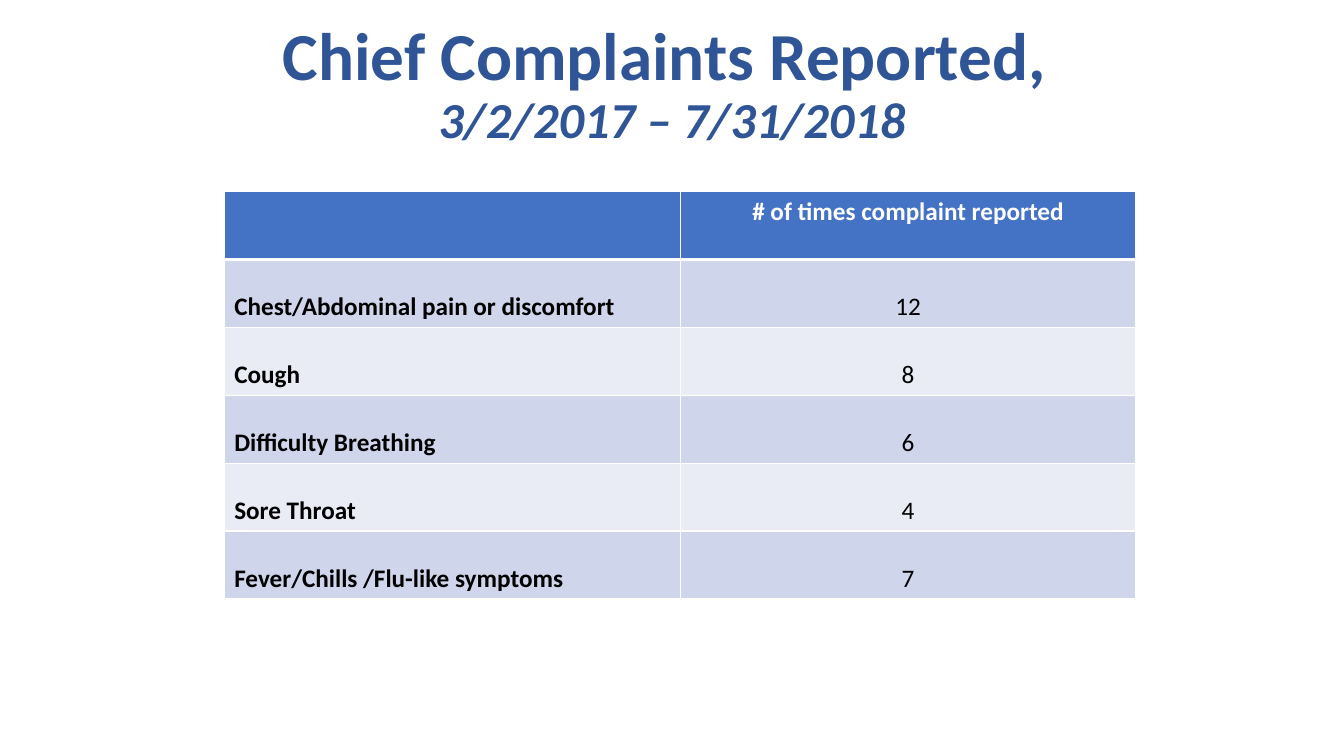
from lxml.etree import SubElement
from pptx import Presentation
from pptx.dml.color import RGBColor
from pptx.enum.text import MSO_ANCHOR, PP_ALIGN
from pptx.oxml.ns import qn
from pptx.util import Cm, Pt

# Content
TITLE = "Chief Complaints Reported, "
PERIOD = "3/2/2017 – 7/31/2018"
HEADINGS = ("", "# of times complaint reported")
COMPLAINTS = [
    ("Chest/Abdominal pain or discomfort", 12),
    ("Cough", 8),
    ("Difficulty Breathing", 6),
    ("Sore Throat", 4),
    ("Fever/Chills /Flu-like symptoms", 7),
]

# Colours and measures
NAVY = RGBColor(0x2F, 0x55, 0x97)
BLUE = RGBColor(0x44, 0x72, 0xC4)
BANDS = (RGBColor(0xCF, 0xD5, 0xEA), RGBColor(0xE9, 0xEB, 0xF5))
WHITE = RGBColor(0xFF, 0xFF, 0xFF)
BLACK = RGBColor(0, 0, 0)
COLUMN_WIDTH, ROW_HEIGHT = Cm(11.49), Cm(1.71)


def write(paragraph, text, size=18, color=BLACK, bold=False, italic=False,
          align=PP_ALIGN.CENTER):
    paragraph.alignment = align
    run = paragraph.add_run()
    run.text = text
    font = run.font
    font.name, font.size = "Calibri", Pt(size)
    font.bold, font.italic = bold, italic
    font.color.rgb = color


def add_borders(cell, **widths):
    properties = cell._tc.get_or_add_tcPr()
    for side in ("L", "R", "T", "B"):
        line = SubElement(properties, qn(f"a:ln{side}"),
                          w=str(Pt(widths.get(side, 1))))
        fill = SubElement(line, qn("a:solidFill"))
        SubElement(fill, qn("a:srgbClr"), val=str(WHITE))


def fill_cell(cell, text, background, anchor=MSO_ANCHOR.BOTTOM, borders=None, **style):
    add_borders(cell, **(borders or {}))
    cell.fill.solid()
    cell.fill.fore_color.rgb = background
    cell.vertical_anchor = anchor
    write(cell.text_frame.paragraphs[0], text, **style)


def main():
    deck = Presentation()
    deck.slide_width, deck.slide_height = Cm(33.87), Cm(19.05)
    slide = deck.slides.add_slide(deck.slide_layouts[6])

    # Complaint table
    row_count = len(COMPLAINTS) + 1
    table = slide.shapes.add_table(
        row_count, 2, Cm(5.65), Cm(4.83),
        COLUMN_WIDTH * 2, ROW_HEIGHT * row_count).table
    for column in table.columns:
        column.width = COLUMN_WIDTH
    for row in table.rows:
        row.height = ROW_HEIGHT

    for index, heading in enumerate(HEADINGS):
        fill_cell(table.cell(0, index), heading, BLUE, anchor=MSO_ANCHOR.TOP,
                  borders={"B": 3}, color=WHITE, bold=True)
    for index, (complaint, count) in enumerate(COMPLAINTS):
        band = BANDS[index % 2]
        # The first body row shares the thick line under the headings
        borders = {"T": 3} if index == 0 else None
        fill_cell(table.cell(index + 1, 0), complaint, band, borders=borders,
                  bold=True, align=PP_ALIGN.LEFT)
        fill_cell(table.cell(index + 1, 1), str(count), band, borders=borders)

    # Title with reporting period
    heading_frame = slide.shapes.add_textbox(
        Cm(1.7), Cm(1.07), Cm(30.48), Cm(2.18)).text_frame
    heading_frame.word_wrap = True
    heading_frame.vertical_anchor = MSO_ANCHOR.MIDDLE
    heading = heading_frame.paragraphs[0]
    heading.line_spacing = 0.9
    write(heading, TITLE, size=48, color=NAVY, bold=True)
    heading.add_line_break()
    write(heading, PERIOD, size=36, color=NAVY, bold=True, italic=True)

    deck.save("out.pptx")


if __name__ == "__main__":
    main()
